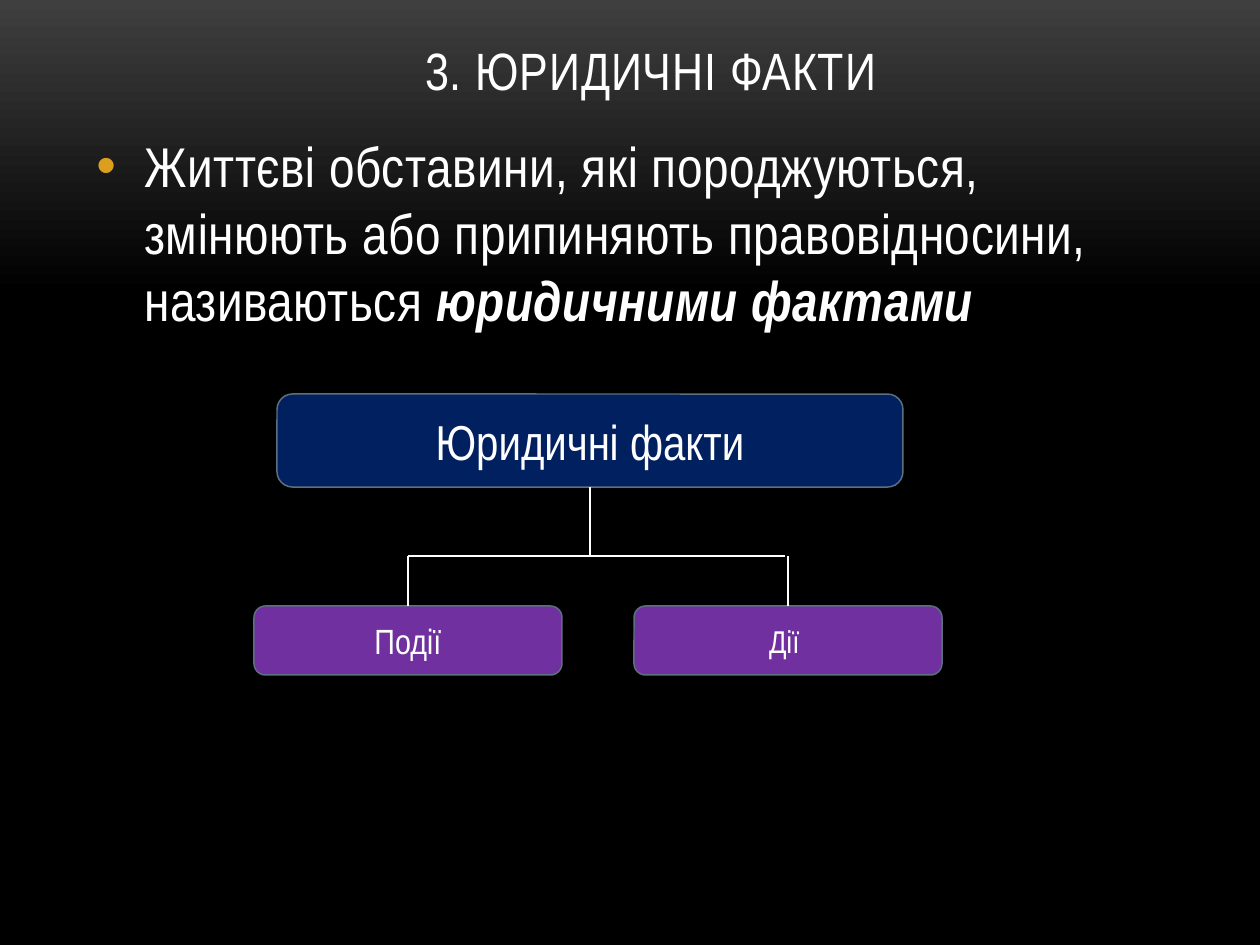
from dataclasses import dataclass

from lxml.etree import SubElement
from pptx import Presentation
from pptx.dml.color import RGBColor
from pptx.enum.shapes import MSO_CONNECTOR, MSO_SHAPE
from pptx.enum.text import MSO_ANCHOR, PP_ALIGN
from pptx.oxml.ns import qn
from pptx.util import Pt

EMU_PER_PIXEL = 914400 / 126


def px(length):
    return round(length * EMU_PER_PIXEL)


def rgb(value):
    return RGBColor.from_string(value)


@dataclass(frozen=True)
class Theme:
    font: str = "Arial Narrow"
    text: str = "FFFFFF"
    bullet: str = "DC9E1F"
    glow: str = "3F3F3F"
    background: str = "000000"
    root: str = "002060"
    branch: str = "7030A0"
    outline: str = "5D7080"
    title_size: int = 30
    body_size: int = 32
    root_size: int = 28
    event_size: int = 20
    action_size: int = 18
    outline_width: float = 0.85
    connector_width: float = 1.5


class SlideBuilder:
    """Holds the theme and the current slide, and adds each kind of element."""

    def __init__(self, slide, theme):
        self.slide = slide
        self.theme = theme

    def paint_background(self):
        fill = self.slide.background.fill
        fill.gradient()
        fill.gradient_angle = 270
        stops = ((0, self.theme.glow), (0.31, self.theme.background))
        for stop, (position, color) in zip(fill.gradient_stops, stops):
            stop.position = position
            stop.color.rgb = rgb(color)

    def add_run(self, paragraph, text, size, spacing=0, **formats):
        run = paragraph.add_run()
        run.text = text
        values = {"name": self.theme.font, "size": Pt(size), **formats}
        for name, value in values.items():
            setattr(run.font, name, value)
        run.font.color.rgb = rgb(self.theme.text)
        if spacing:
            run._r.get_or_add_rPr().set("spc", str(spacing))

    def add_text_box(self, box, anchor):
        frame = self.slide.shapes.add_textbox(*map(px, box)).text_frame
        frame.word_wrap = True
        frame.vertical_anchor = anchor
        return frame.paragraphs[0]

    def add_title(self, box, text):
        paragraph = self.add_text_box(box, MSO_ANCHOR.BOTTOM)
        paragraph.alignment = PP_ALIGN.CENTER
        self.add_run(paragraph, text, self.theme.title_size, spacing=50)

    def add_bullet(self, box, text, emphasis):
        paragraph = self.add_text_box(box, MSO_ANCHOR.TOP)
        properties = paragraph._p.get_or_add_pPr()
        indent = px(48)
        properties.set("marL", str(indent))
        properties.set("indent", str(-indent))
        color = SubElement(properties, qn("a:buClr"))
        SubElement(color, qn("a:srgbClr"), val=self.theme.bullet)
        SubElement(properties, qn("a:buFont"), typeface="Arial")
        SubElement(properties, qn("a:buChar"), char="•")
        paragraph.space_after = Pt(6)
        size = self.theme.body_size
        self.add_run(paragraph, text, size, spacing=30)
        self.add_run(paragraph, emphasis, size, spacing=30, bold=True, italic=True)

    def add_node(self, box, text, size, color):
        shape = self.slide.shapes.add_shape(MSO_SHAPE.ROUNDED_RECTANGLE, *map(px, box))
        shape.shadow.inherit = False
        shape.fill.solid()
        shape.fill.fore_color.rgb = rgb(color)
        shape.line.color.rgb = rgb(self.theme.outline)
        shape.line.width = Pt(self.theme.outline_width)
        shape.text_frame.word_wrap = True
        shape.text_frame.vertical_anchor = MSO_ANCHOR.MIDDLE
        paragraph = shape.text_frame.paragraphs[0]
        paragraph.alignment = PP_ALIGN.CENTER
        self.add_run(paragraph, text, size)
        return shape

    def add_line(self, start, end, begin_shape=None, end_shape=None):
        connector = self.slide.shapes.add_connector(
            MSO_CONNECTOR.STRAIGHT, *map(px, (*start, *end))
        )
        connector.line.color.rgb = rgb(self.theme.text)
        connector.line.width = Pt(self.theme.connector_width)
        SubElement(connector._element.spPr, qn("a:effectLst"))
        if begin_shape is not None:
            connector.begin_connect(begin_shape, 2)
        if end_shape is not None:
            connector.end_connect(end_shape, 0)


def main():
    presentation = Presentation()
    presentation.slide_width = px(1260)
    presentation.slide_height = px(945)
    slide = presentation.slides.add_slide(presentation.slide_layouts[6])
    theme = Theme()
    builder = SlideBuilder(slide, theme)

    builder.paint_background()
    builder.add_title((105, 36, 1092, 71), "3. ЮРИДИЧНІ ФАКТИ")
    builder.add_bullet(
        (84, 125, 1092, 663),
        "Життєві обставини, які породжуються, змінюють або припиняють "
        "правовідносини, називаються ",
        "юридичними фактами",
    )

    root = builder.add_node(
        (277, 394, 626, 93), "Юридичні факти", theme.root_size, theme.root
    )
    rail_y, branch_y, branch_width = 556, 606, 308
    builder.add_line((590, 487), (590, rail_y), begin_shape=root)
    builder.add_line((408, rail_y), (785, rail_y))
    branches = ((254, "Події", theme.event_size), (634, "Дії ", theme.action_size))
    for left, text, size in branches:
        box = (left, branch_y, branch_width, 69)
        branch = builder.add_node(box, text, size, theme.branch)
        center = left + branch_width // 2
        builder.add_line((center, rail_y), (center, branch_y), end_shape=branch)

    presentation.save("out.pptx")


if __name__ == "__main__":
    main()
